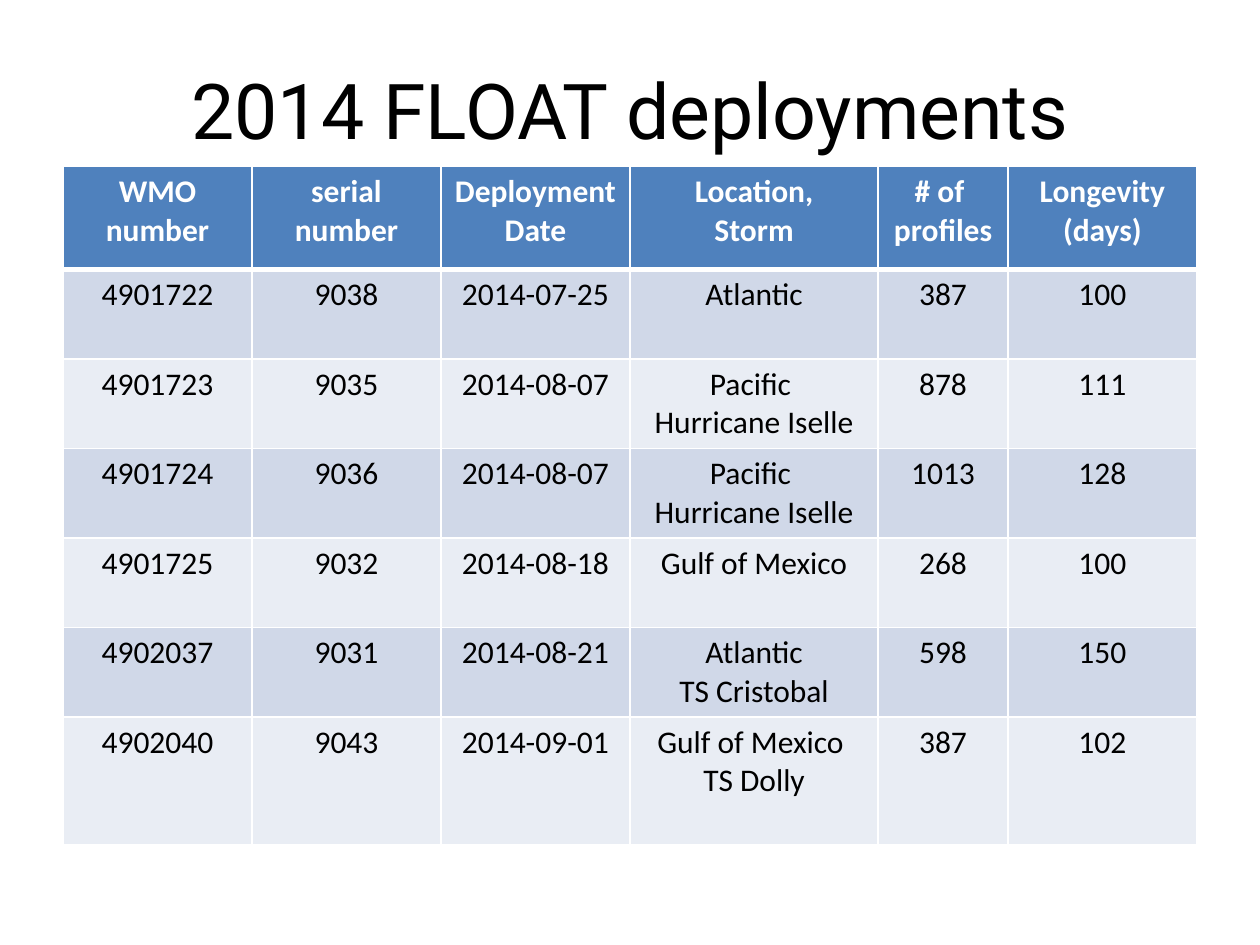
from dataclasses import dataclass
from typing import NamedTuple

from lxml import etree
from pptx import Presentation
from pptx.dml.color import RGBColor
from pptx.enum.text import MSO_ANCHOR, PP_ALIGN
from pptx.oxml.ns import qn
from pptx.util import Inches, Pt

CENTER = PP_ALIGN.CENTER
MIDDLE, TOP = MSO_ANCHOR.MIDDLE, MSO_ANCHOR.TOP
TITLE_ONLY = 5


@dataclass(frozen=True)
class Theme:
    ink: str = "000000"
    white: str = "FFFFFF"
    head: str = "4F81BD"
    bands: tuple = ("D0D8E8", "E9EDF4")
    title_font: str = "Roboto"
    body_font: str = "Calibri"
    title_size: int = 44
    body_size: int = 18
    thin: int = 1
    thick: int = 3


class Float(NamedTuple):
    wmo: str
    serial: str
    date: str
    place: str
    count: str
    days: str


THEME = Theme()
WIDE, HIGH = 10, 7.5
LEFT, TABLE_TOP, SPAN = 0.5, 1.32, 9
COLS = (1.5, 1.5, 1.5, 1.97, 1.03, 1.5)
HEAD_ROW, BODY_ROW, LAST_ROW = 0.82, 0.71, 1.01

# "\n" starts a paragraph, "\v" breaks a line
HEAD = Float("WMO number", "serial\nnumber", "Deployment Date",
             "Location,\nStorm", "# of \vprofiles", "Longevity\v(days)")
FLOATS = [
    Float("4901722", "9038", "2014-07-25", "Atlantic", "387", "100"),
    Float("4901723", "9035", "2014-08-07", "Pacific \vHurricane Iselle", "878", "111"),
    Float("4901724", "9036", "2014-08-07", "Pacific \vHurricane Iselle", "1013", "128"),
    Float("4901725", "9032", "2014-08-18", "Gulf of Mexico", "268", "100"),
    Float("4902037", "9031", "2014-08-21", "Atlantic\vTS Cristobal", "598", "150"),
    Float("4902040", "9043", "2014-09-01", "Gulf of Mexico \vTS Dolly", "387", "102"),
]


def write(frame, text: str, *, font: str = THEME.body_font,
          size: int = THEME.body_size, color: str = THEME.ink,
          bold: bool = False) -> None:
    frame.text = text
    frame.word_wrap = True
    for para in frame.paragraphs:
        para.alignment = CENTER
        for run in para.runs:
            face = run.font
            face.name, face.size, face.bold = font, Pt(size), bold
            face.color.rgb = RGBColor.from_string(color)


def edge(cell, top: int, base: int) -> None:
    """Draw white lines on the four sides, with top and base widths in points."""
    props = cell._tc.get_or_add_tcPr()
    sides = {"a:lnL": THEME.thin, "a:lnR": THEME.thin,
             "a:lnT": top, "a:lnB": base}
    for spot, (tag, width) in enumerate(sides.items()):
        line = etree.Element(qn(tag), w=str(Pt(width)))
        fill = etree.SubElement(line, qn("a:solidFill"))
        etree.SubElement(fill, qn("a:srgbClr"), val=THEME.white)
        props.insert(spot, line)


def fill_row(table, row: int, data: Float, *, back: str, color: str = THEME.ink,
             bold: bool = False, top: int = THEME.thin,
             base: int = THEME.thin) -> None:
    for col, text in enumerate(data):
        cell = table.cell(row, col)
        cell.vertical_anchor = TOP
        cell.fill.solid()
        cell.fill.fore_color.rgb = RGBColor.from_string(back)
        write(cell.text_frame, text, color=color, bold=bold)
        edge(cell, top, base)


def add_grid(slide) -> None:
    rows = [HEAD_ROW] + [BODY_ROW] * (len(FLOATS) - 1) + [LAST_ROW]
    table = slide.shapes.add_table(
        len(rows), len(COLS), Inches(LEFT), Inches(TABLE_TOP),
        Inches(SPAN), Inches(sum(rows))).table
    for col, width in zip(table.columns, COLS):
        col.width = Inches(width)
    for row, height in zip(table.rows, rows):
        row.height = Inches(height)
    fill_row(table, 0, HEAD, back=THEME.head, color=THEME.white,
             bold=True, base=THEME.thick)
    for num, data in enumerate(FLOATS, 1):
        # The first body row meets the heavy line under the header
        top = THEME.thick if num == 1 else THEME.thin
        fill_row(table, num, data, back=THEME.bands[(num - 1) % 2], top=top)


def main() -> None:
    deck = Presentation()
    deck.slide_width, deck.slide_height = Inches(WIDE), Inches(HIGH)
    slide = deck.slides.add_slide(deck.slide_layouts[TITLE_ONLY])

    # Title
    title = slide.shapes.title
    title.left, title.top = Inches(LEFT), Inches(0.41)
    title.width, title.height = Inches(SPAN), Inches(0.91)
    title.text_frame.vertical_anchor = MIDDLE
    write(title.text_frame, "2014 FLOAT deployments",
          font=THEME.title_font, size=THEME.title_size)

    # Deployment table
    add_grid(slide)
    deck.save("out.pptx")


if __name__ == "__main__":
    main()
